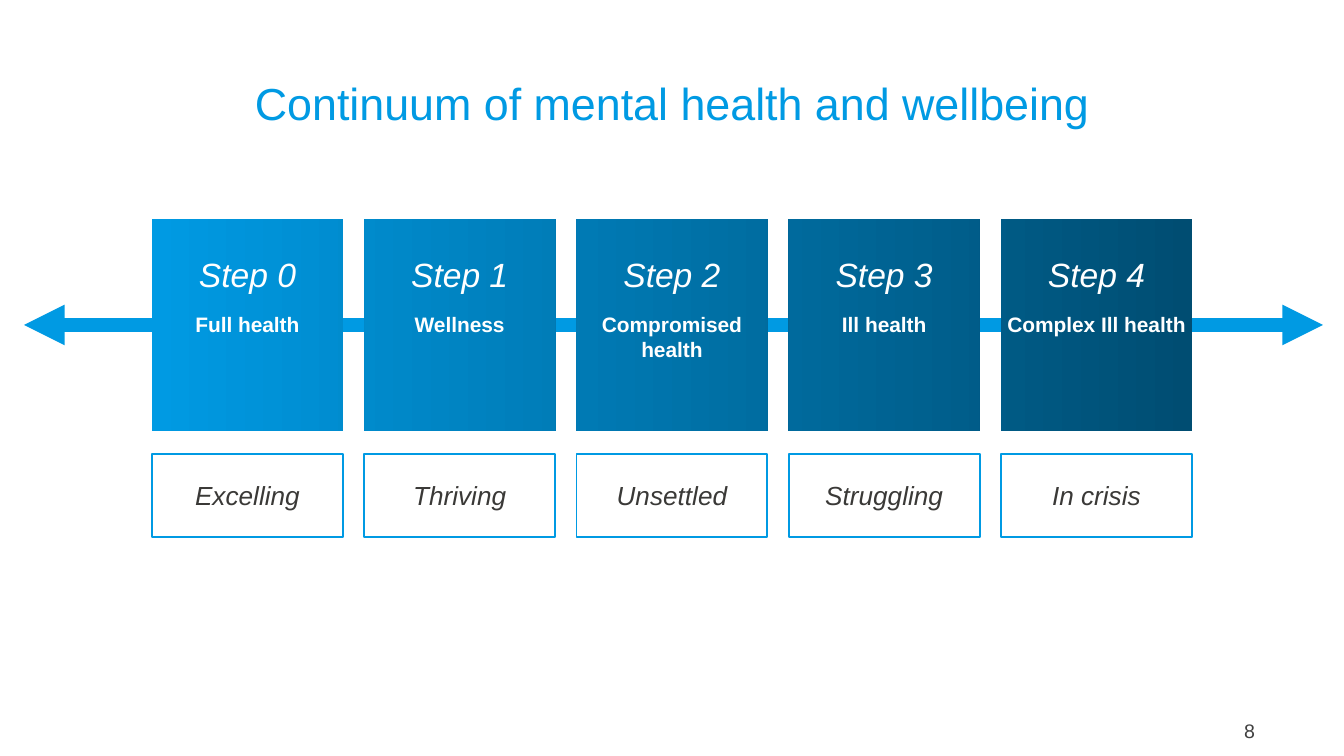
import dataclasses

import lxml.etree
import pptx
import pptx.dml.color
import pptx.enum.dml
import pptx.enum.shapes
import pptx.enum.text
import pptx.oxml.ns
import pptx.util

EMU_PER_PX = 914400 / 134.4
ALIGN = pptx.enum.text.PP_ALIGN
ANCHOR = pptx.enum.text.MSO_ANCHOR


@dataclasses.dataclass(frozen=True)
class Theme:
    font: str = "Arial"
    blue: str = "009AE3"
    navy: str = "004D72"
    white: str = "FFFFFF"
    ink: str = "3A3937"
    grey: str = "404040"
    title_size: float = 24
    step_size: float = 18
    label_size: float = 14
    state_size: float = 11.2
    number_size: float = 10.5
    axis_width: float = 7.25
    border_width: float = 1
    space_after: float = 9


THEME = Theme()

STEPS = [
    ("Step 0", "Full health", "Excelling"),
    ("Step 1", "Wellness", "Thriving"),
    ("Step 2", "Compromised health", "Unsettled"),
    ("Step 3", "Ill health", "Struggling"),
    ("Step 4", "Complex Ill health", "In crisis"),
]
STEP_WIDTH = 191


def px(length):
    return pptx.util.Emu(round(length * EMU_PER_PX))


def rgb(value):
    return pptx.dml.color.RGBColor.from_string(value)


def column_boxes(box):
    """Split a box into one column per step, with equal gaps."""
    left, top, width, height = box
    pitch = (width - STEP_WIDTH) / (len(STEPS) - 1)
    return [(left + i * pitch, top, STEP_WIDTH, height) for i in range(len(STEPS))]


def set_frame(frame, anchor, margins):
    frame.word_wrap = True
    frame.auto_size = pptx.enum.text.MSO_AUTO_SIZE.NONE
    frame.vertical_anchor = anchor
    (frame.margin_left, frame.margin_top,
     frame.margin_right, frame.margin_bottom) = map(px, margins)


def set_paragraph(para, text, size, color, align=ALIGN.CENTER, bold=False,
                  italic=False, space_after=0):
    para.text = text
    para.alignment = align
    para.space_after = pptx.util.Pt(space_after)
    for span in para.runs:
        span.font.name = THEME.font
        span.font.size = pptx.util.Pt(size)
        span.font.bold = bold
        span.font.italic = italic
        span.font.color.rgb = rgb(color)


def add_title(page, box, text):
    title = page.shapes.title
    title.left, title.top, title.width, title.height = map(px, box)
    set_frame(title.text_frame, ANCHOR.BOTTOM, (0, 0, 0, 0))
    para = title.text_frame.paragraphs[0]
    set_paragraph(para, text, THEME.title_size, THEME.blue)
    para.line_spacing = 0.9


def add_axis(page, box):
    """Draw the double-headed arrow along the top edge of the box."""
    left, top, width, _ = box
    axis = page.shapes.add_connector(
        pptx.enum.shapes.MSO_CONNECTOR.STRAIGHT,
        px(left), px(top), px(left + width), px(top))
    axis.line.color.rgb = rgb(THEME.blue)
    axis.line.width = pptx.util.Pt(THEME.axis_width)
    qn = pptx.oxml.ns.qn
    line = axis.line._get_or_add_ln()
    for end in ("a:headEnd", "a:tailEnd"):
        lxml.etree.SubElement(line, qn(end), type="triangle")
    lxml.etree.SubElement(axis._element.spPr, qn("a:effectLst"))


def add_gradient_band(page, box):
    """Draw all step squares as one outline, so they share one gradient."""
    builder = None
    for left, top, width, height in column_boxes(box):
        right, bottom = left + width, top + height
        if builder is None:
            builder = page.shapes.build_freeform(px(left), px(top))
        else:
            builder.move_to(px(left), px(top))
        corners = [(right, top), (right, bottom), (left, bottom)]
        builder.add_line_segments([(px(x), px(y)) for x, y in corners], close=True)
    band = builder.convert_to_shape()
    band.shadow.inherit = False
    band.line.fill.background()
    band.fill.gradient()
    band.fill.gradient_angle = 180
    for stop, color in zip(band.fill.gradient_stops, (THEME.navy, THEME.blue)):
        stop.color.rgb = rgb(color)


def add_step_texts(page, box):
    for column, (step, state, _) in zip(column_boxes(box), STEPS):
        frame = page.shapes.add_textbox(*map(px, column)).text_frame
        set_frame(frame, ANCHOR.TOP, (5, 3, 5, 3))
        set_paragraph(frame.paragraphs[0], step, THEME.step_size, THEME.white,
                      italic=True, space_after=THEME.space_after)
        set_paragraph(frame.add_paragraph(), state, THEME.state_size, THEME.white,
                      bold=True, space_after=THEME.space_after)


def add_labels(page, box):
    for column, (_, _, label) in zip(column_boxes(box), STEPS):
        card = page.shapes.add_shape(
            pptx.enum.shapes.MSO_SHAPE.RECTANGLE, *map(px, column))
        card.shadow.inherit = False
        card.fill.background()
        card.line.color.rgb = rgb(THEME.blue)
        card.line.width = pptx.util.Pt(THEME.border_width)
        set_frame(card.text_frame, ANCHOR.MIDDLE, (5, 3, 5, 3))
        set_paragraph(card.text_frame.paragraphs[0], label, THEME.label_size,
                      THEME.ink, italic=True, space_after=THEME.space_after)


def add_page_number(page, box, number):
    frame = page.shapes.add_textbox(*map(px, box)).text_frame
    set_frame(frame, ANCHOR.MIDDLE, (0, 0, 0, 5))
    set_paragraph(frame.paragraphs[0], number, THEME.number_size, THEME.grey,
                  align=ALIGN.RIGHT)


def main():
    deck = pptx.Presentation()
    deck.slide_width, deck.slide_height = px(1344), px(756)
    page = deck.slides.add_slide(deck.slide_layouts[5])
    add_axis(page, (24, 325, 1299, 0))
    add_gradient_band(page, (152, 219, 1040, 212))
    add_title(page, (93, 50, 1158, 80), "Continuum of mental health and wellbeing")
    add_step_texts(page, (152, 251, 1040, 126))
    add_labels(page, (152, 454, 1040, 83))
    add_page_number(page, (1149, 711, 106, 44), "8")
    deck.save("out.pptx")


if __name__ == "__main__":
    main()
